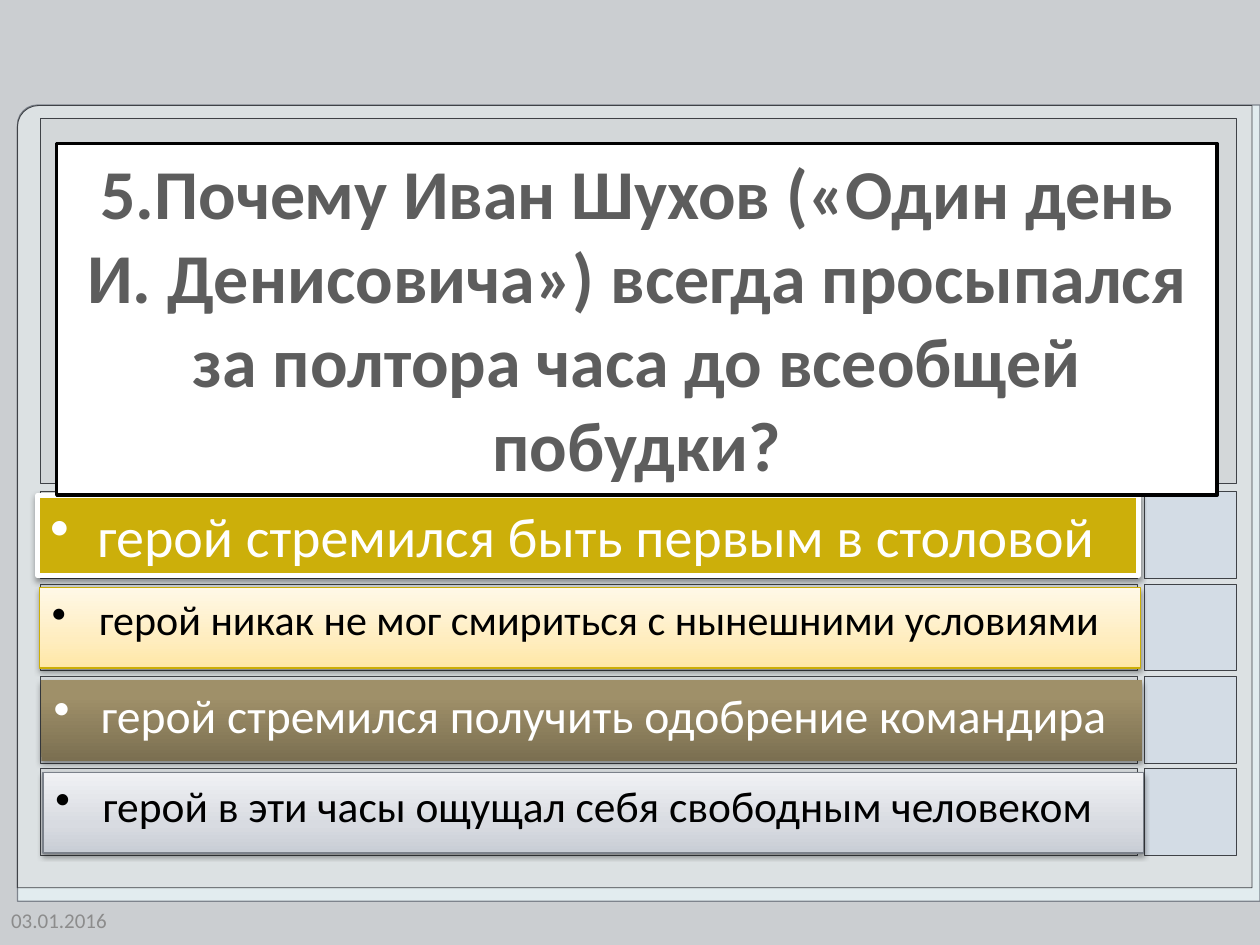
from dataclasses import dataclass
from typing import Optional

import pptx
import pptx.dml.color
import pptx.enum.shapes
import pptx.enum.text
import pptx.oxml.ns
import pptx.util
from lxml import etree

Pt = pptx.util.Pt
RGBColor = pptx.dml.color.RGBColor
MSO_SHAPE = pptx.enum.shapes.MSO_SHAPE
MSO_ANCHOR = pptx.enum.text.MSO_ANCHOR
PP_ALIGN = pptx.enum.text.PP_ALIGN
qn = pptx.oxml.ns.qn

FONT = "Calibri"
WHITE = RGBColor(0xFF, 0xFF, 0xFF)
BLACK = RGBColor(0x00, 0x00, 0x00)
BACKGROUND = RGBColor(0xCB, 0xCE, 0xD1)
PANEL_BACK = RGBColor(0xE2, 0xEC, 0xEF)
PANEL_BACK_LINE = RGBColor(0x7E, 0x84, 0x8D)
PANEL = RGBColor(0xD8, 0xD8, 0xD8)
FRAME_LINE = RGBColor(0x3F, 0x42, 0x47)
SIDE_CELL = RGBColor(0xCC, 0xD8, 0xE7)
QUESTION_TEXT = RGBColor(0x5D, 0x5D, 0x5D)
DATE_TEXT = RGBColor(0x8C, 0x8C, 0x8C)
GOLD = RGBColor(0xCC, 0xAF, 0x0A)
GOLD_LINE = RGBColor(0xCC, 0xAE, 0x05)
GREY_LINE = RGBColor(0x7B, 0x81, 0x8A)
CREAM_STOPS = ((0, RGBColor(0xFF, 0xE7, 0xA5)), (35, RGBColor(0xFF, 0xED, 0xBF)),
               (100, RGBColor(0xFF, 0xF8, 0xE7)))
BROWN_STOPS = ((0, RGBColor(0x7B, 0x6F, 0x51)), (80, RGBColor(0x9F, 0x90, 0x69)),
               (100, RGBColor(0xA1, 0x91, 0x69)))
SILVER_STOPS = ((0, RGBColor(0xC8, 0xCD, 0xD5)), (35, RGBColor(0xD8, 0xDB, 0xE1)),
                (100, RGBColor(0xF0, 0xF1, 0xF4)))
ROW_STEP = 52.8


@dataclass(frozen=True)
class Box:
    left: float
    top: float
    width: float
    height: float


@dataclass(frozen=True)
class Answer:
    text: str
    size: float
    color: RGBColor
    fill: Optional[RGBColor] = None
    stops: tuple = ()
    line: Optional[RGBColor] = None
    line_width: float = 0.75


ANSWERS = (
    Answer("герой стремился быть первым в столовой", 32, WHITE,
           fill=GOLD, line=WHITE, line_width=3),
    Answer("герой никак не мог смириться с нынешними условиями", 24, BLACK,
           stops=CREAM_STOPS, line=GOLD_LINE),
    Answer("герой стремился получить одобрение командира", 27.2, WHITE,
           stops=BROWN_STOPS),
    Answer("герой в эти часы ощущал себя свободным человеком", 24.8, BLACK,
           stops=SILVER_STOPS, line=GREY_LINE),
)


def add_color(parent, color: RGBColor, alpha: int = 100) -> None:
    clr = etree.SubElement(parent, qn("a:srgbClr"), val=str(color))
    if alpha < 100:
        etree.SubElement(clr, qn("a:alpha"), val=str(alpha * 1000))


def add_box(s, box: Box, fill: Optional[RGBColor], line: Optional[RGBColor],
            line_width: float = 0.5, alpha: int = 100, kind=MSO_SHAPE.RECTANGLE):
    sp = s.shapes.add_shape(kind, Pt(box.left), Pt(box.top), Pt(box.width), Pt(box.height))
    sp.shadow.inherit = False
    if fill is not None:
        sp.fill.solid()
        sp.fill.fore_color.rgb = fill
        if alpha < 100:
            clr = sp._element.spPr.find(".//" + qn("a:srgbClr"))
            etree.SubElement(clr, qn("a:alpha"), val=str(alpha * 1000))
    if line is None:
        sp.line.fill.background()
    else:
        sp.line.color.rgb = line
        sp.line.width = Pt(line_width)
    return sp


def add_panel(s, box: Box, radius: float, fill: RGBColor, line: RGBColor,
              line_width: float, alpha: int = 100) -> None:
    """Panel whose only round corner is the top left one."""
    sp = add_box(s, box, fill, line, line_width, alpha, MSO_SHAPE.ROUND_1_RECTANGLE)
    sp.adjustments[0] = radius
    sp._element.spPr.find(qn("a:xfrm")).set("flipH", "1")


def set_gradient(sp, stops: tuple) -> None:
    """Fill from bottom to top with (percent, colour) stops."""
    sp.fill.gradient()
    sp.fill.gradient_angle = 90
    gs_list = sp._element.spPr.find(".//" + qn("a:gsLst"))
    for gs in list(gs_list):
        gs_list.remove(gs)
    for percent, color in stops:
        add_color(etree.SubElement(gs_list, qn("a:gs"), pos=str(percent * 1000)), color)


def add_shadow(sp) -> None:
    effects = sp._element.spPr.find(qn("a:effectLst"))
    shadow = etree.SubElement(effects, qn("a:outerShdw"), blurRad=str(Pt(3.1)),
                              dist=str(Pt(1.6)), dir="5400000", rotWithShape="0")
    add_color(shadow, BLACK, 38)


def set_text(sp, text: str, size: float, color: RGBColor, anchor, align=PP_ALIGN.LEFT,
             bold: bool = False):
    tf = sp.text_frame
    tf.word_wrap = True
    tf.vertical_anchor = anchor
    p = tf.paragraphs[0]
    p.text = text
    p.alignment = align
    p.font.name = FONT
    p.font.size = Pt(size)
    p.font.bold = bold
    p.font.color.rgb = color
    return p


def add_answer(s, box: Box, answer: Answer) -> None:
    sp = add_box(s, box, answer.fill, answer.line, answer.line_width)
    if answer.stops:
        set_gradient(sp, answer.stops)
    add_shadow(sp)
    p = set_text(sp, answer.text, answer.size, answer.color, MSO_ANCHOR.TOP)
    pPr = p._p.get_or_add_pPr()
    pPr.set("marL", str(Pt(27)))
    pPr.set("indent", str(-Pt(27)))
    bullet = etree.Element(qn("a:buChar"), char="•")
    pPr.insert_element_before(bullet, "a:tabLst", "a:defRPr", "a:extLst")


def main() -> None:
    prs = pptx.Presentation()
    prs.slide_width, prs.slide_height = Pt(720), Pt(540)
    s = prs.slides.add_slide(prs.slide_layouts[6])
    s.background.fill.solid()
    s.background.fill.fore_color.rgb = BACKGROUND

    add_panel(s, Box(10, 60, 710, 455), 0.025, PANEL_BACK, PANEL_BACK_LINE, 0.75)
    add_panel(s, Box(10, 60.3, 705.5, 447), 0.027, PANEL, FRAME_LINE, 0.5, 50)
    add_box(s, Box(23, 67.4, 683.5, 209), BACKGROUND, FRAME_LINE, alpha=50)
    for i in range(len(ANSWERS)):
        top = 281 + i * ROW_STEP
        add_box(s, Box(23, top, 627, 49.5), BACKGROUND, FRAME_LINE, alpha=50)
        add_box(s, Box(654, top, 52.5, 49.5), SIDE_CELL, FRAME_LINE, alpha=50)

    date = s.shapes.add_textbox(Pt(-0.7), Pt(511.2), Pt(84.2), Pt(28.8))
    set_text(date, "03.01.2016", 12, DATE_TEXT, MSO_ANCHOR.MIDDLE)

    for i, answer in enumerate(ANSWERS):
        add_answer(s, Box(21.6 + i, 283 + i * ROW_STEP, 629, 46), answer)

    question = add_box(s, Box(32.4, 82, 663, 201), WHITE, BLACK, 2)
    set_text(question, "5.Почему Иван Шухов («Один день И. Денисовича») всегда просыпался "
             "за полтора часа до всеобщей побудки?", 40, QUESTION_TEXT,
             MSO_ANCHOR.TOP, PP_ALIGN.CENTER, bold=True)
    prs.save("out.pptx")


if __name__ == "__main__":
    main()
